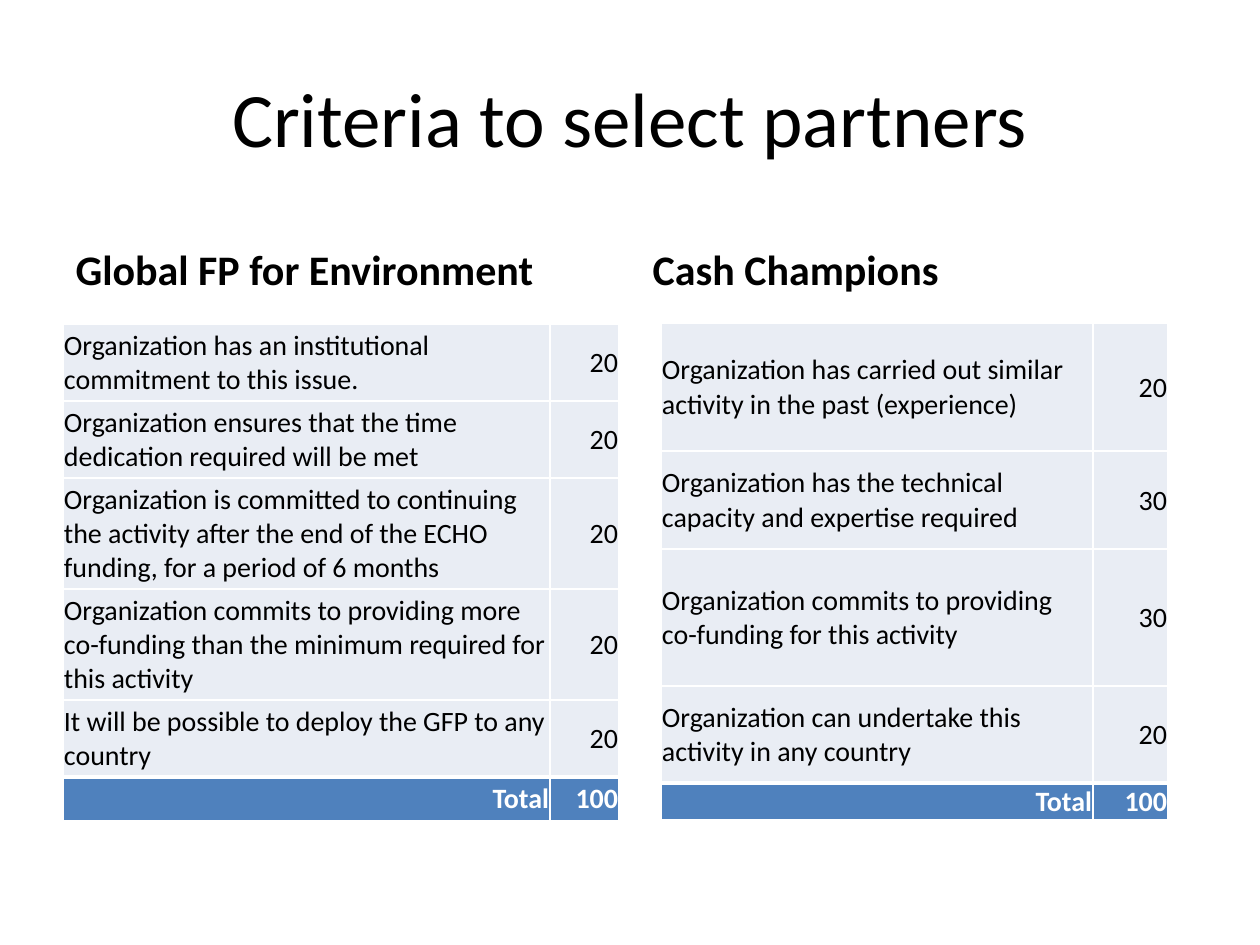
from lxml.etree import SubElement
from pptx import Presentation
from pptx.dml.color import RGBColor
from pptx.enum.text import MSO_ANCHOR as Anchor, PP_ALIGN as Align
from pptx.oxml.ns import qn
from pptx.util import Pt

EMU_PER_PX = 914400 / 126
FONT = "Calibri"
COLORS = {"text": "000000", "white": "FFFFFF", "body": "E9EDF4", "total": "4F81BD"}
COMPARISON_LAYOUT = 4

ENVIRONMENT_CRITERIA = [
    ("Organization has an institutional commitment to this issue.", 20),
    ("Organization ensures that the time dedication required will be met", 20),
    ("Organization is committed to continuing the activity after the end of "
     "the ECHO funding, for a period of 6 months", 20),
    ("Organization commits to providing more co-funding than the minimum "
     "required for this activity", 20),
    ("It will be possible to deploy the GFP to any country", 20),
]
CASH_CRITERIA = [
    ("Organization has carried out similar activity in the past (experience)", 20),
    ("Organization has the technical capacity and expertise required", 30),
    ("Organization commits to providing co-funding for this activity", 30),
    ("Organization can undertake this activity in any country", 20),
]


def px(value):
    return round(value * EMU_PER_PX)


def color(name):
    return RGBColor.from_string(COLORS[name])


def write(frame, text, size, align, bold=False, color_name="text"):
    paragraph = frame.paragraphs[0]
    paragraph.alignment = align
    paragraph.space_before = Pt(0)
    run = paragraph.add_run()
    run.text = text
    run.font.name = FONT
    run.font.size = Pt(size)
    run.font.bold = bold
    run.font.color.rgb = color(color_name)


def fill_placeholder(shape, box, text, size, align, anchor, bold=False):
    shape.left, shape.top, shape.width, shape.height = map(px, box)
    shape.text_frame.vertical_anchor = anchor
    write(shape.text_frame, text, size, align, bold)


def set_borders(cell, top=1, bottom=1):
    properties = cell._tc.get_or_add_tcPr()
    for side, points in (("L", 1), ("R", 1), ("T", top), ("B", bottom)):
        line = SubElement(properties, qn(f"a:ln{side}"), w=str(Pt(points)))
        solid = SubElement(line, qn("a:solidFill"))
        SubElement(solid, qn("a:srgbClr"), val=COLORS["white"])


def add_criteria_table(slide, left, top, widths, heights, criteria):
    rows = criteria + [("Total", sum(score for _, score in criteria))]
    table = slide.shapes.add_table(
        len(rows), len(widths), px(left), px(top),
        px(sum(widths)), px(sum(heights))).table
    table.first_row = table.horz_banding = False
    for column, width in zip(table.columns, widths):
        column.width = px(width)
    total_index = len(criteria)
    for row_index, (values, height) in enumerate(zip(rows, heights)):
        table.rows[row_index].height = px(height)
        is_total = row_index == total_index
        for column_index, value in enumerate(values):
            cell = table.cell(row_index, column_index)
            cell.vertical_anchor = Anchor.MIDDLE
            cell.margin_left = cell.margin_right = cell.margin_top = px(1)
            cell.margin_bottom = 0
            # A thick rule sets the total apart from the criteria
            set_borders(cell, top=3 if is_total else 1,
                        bottom=3 if row_index == total_index - 1 else 1)
            cell.fill.solid()
            cell.fill.fore_color.rgb = color("total" if is_total else "body")
            align = Align.RIGHT if is_total or column_index else Align.LEFT
            write(cell.text_frame, str(value), 16, align, is_total,
                  "white" if is_total else "text")


def main():
    presentation = Presentation()
    presentation.slide_width, presentation.slide_height = px(1260), px(945)
    slide = presentation.slides.add_slide(
        presentation.slide_layouts[COMPARISON_LAYOUT])
    holders = {shape.placeholder_format.idx: shape for shape in slide.placeholders}

    # Title and column headings
    fill_placeholder(holders[0], (63, 38, 1134, 157), "Criteria to select partners",
                     44, Align.CENTER, Anchor.MIDDLE)
    headings = ((1, 63, "Global FP for Environment"), (3, 640, "Cash Champions"))
    for index, left, text in headings:
        fill_placeholder(holders[index], (left, 212, 557, 88), text,
                         24, Align.LEFT, Anchor.BOTTOM, bold=True)

    # The tables take the place of the content placeholders
    for index in (2, 4):
        element = holders[index].element
        element.getparent().remove(element)

    # Scoring tables
    add_criteria_table(slide, 661, 323, (432, 75), (128, 98, 137, 97, 37),
                       CASH_CRITERIA)
    add_criteria_table(slide, 63, 324, (487, 69), (77, 77, 111, 111, 77, 44),
                       ENVIRONMENT_CRITERIA)

    presentation.save("out.pptx")


if __name__ == "__main__":
    main()
